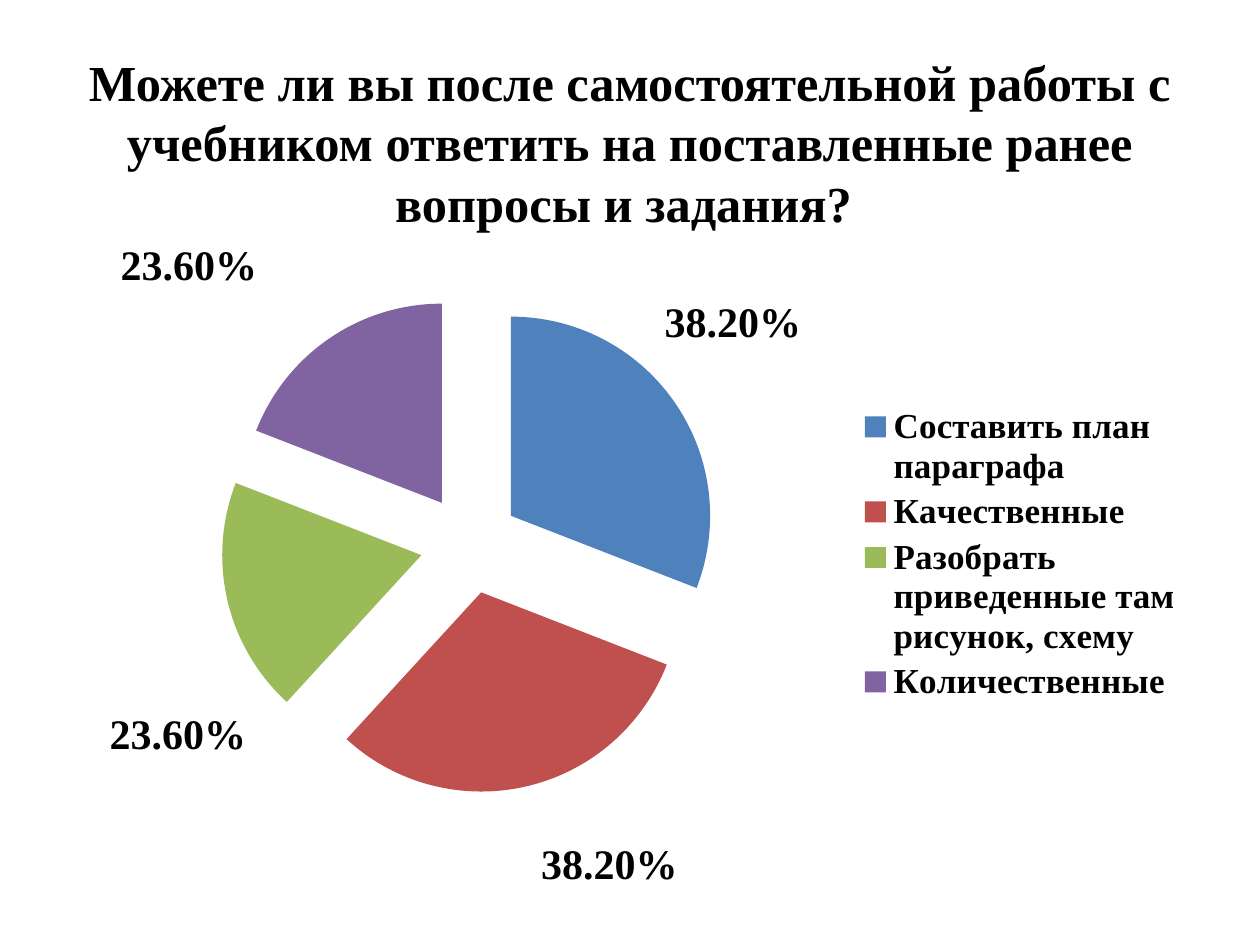
"""Builds a survey slide with a title and an exploded pie chart."""
from dataclasses import dataclass

from lxml.etree import SubElement
from pptx import Presentation
from pptx.chart.data import CategoryChartData
from pptx.dml.color import RGBColor
from pptx.enum.chart import XL_CHART_TYPE as ChartType
from pptx.enum.chart import XL_LABEL_POSITION as LabelPosition
from pptx.enum.chart import XL_LEGEND_POSITION as LegendPosition
from pptx.enum.text import MSO_ANCHOR as Anchor
from pptx.enum.text import PP_ALIGN as Align
from pptx.oxml import parse_xml
from pptx.oxml.ns import nsdecls, qn
from pptx.util import Emu, Pt


@dataclass(frozen=True)
class Theme:
    font: str = "Times New Roman"
    text: str = "000000"
    slices: tuple = ("4F81BD", "C0504D", "9BBB59", "8064A2")
    title_size: float = 28.8
    label_size: int = 24
    legend_size: int = 20


THEME = Theme()
PX = 914400 / 126
CHART_WIDTH, CHART_HEIGHT = 1134, 669


def style_font(font, size):
    font.name = THEME.font
    font.size = Pt(size)
    font.bold = True
    font.color.rgb = RGBColor.from_string(THEME.text)


def manual_layout(x, y, width=None, height=None):
    layout = parse_xml(f"<c:layout {nsdecls('c')}><c:manualLayout/></c:layout>")
    entries = {"x": x / CHART_WIDTH, "y": y / CHART_HEIGHT}
    if width:
        entries = {"xMode": "edge", "yMode": "edge", **entries,
                   "w": width / CHART_WIDTH, "h": height / CHART_HEIGHT}
    for name, value in entries.items():
        SubElement(layout[0], qn(f"c:{name}")).set("val", str(value))
    return layout


presentation = Presentation()
presentation.slide_width = Emu(int(1260 * PX))
presentation.slide_height = Emu(int(945 * PX))
slide = presentation.slides.add_slide(presentation.slide_layouts[6])

title = slide.shapes.add_textbox(*(Emu(int(v * PX)) for v in (63, 38, 1134, 207)))
text_frame = title.text_frame
text_frame.word_wrap = True
text_frame.vertical_anchor = Anchor.MIDDLE
text_frame.text = ("Можете ли вы после самостоятельной работы с учебником "
                   "ответить на поставленные ранее вопросы и задания? ")
paragraph = text_frame.paragraphs[0]
paragraph.alignment = Align.CENTER
style_font(paragraph.runs[0].font, THEME.title_size)

chart_data = CategoryChartData(number_format="0.00%")
chart_data.categories = ["Составить план параграфа", "Качественные",
                         "Разобрать приведенные там рисунок, схему", "Количественные"]
chart_data.add_series("Series 1", (0.382, 0.382, 0.236, 0.236))
chart_box = [Emu(int(v * PX)) for v in (63, 220, CHART_WIDTH, CHART_HEIGHT)]
chart = slide.shapes.add_chart(ChartType.PIE, *chart_box, chart_data).chart
chart.has_title = False
style_font(chart.font, THEME.legend_size)

chart.has_legend = True
legend = chart.legend
legend.position = LegendPosition.RIGHT
legend.include_in_layout = False
style_font(legend.font, THEME.legend_size)
legend_element = legend._element
for old_layout in legend_element.findall(qn("c:layout")):
    legend_element.remove(old_layout)
legend_element.find(qn("c:legendPos")).addnext(manual_layout(792, 181, 330, 307))

plot_area = chart._chartSpace.chart.plotArea
for old_layout in plot_area.findall(qn("c:layout")):
    plot_area.remove(old_layout)
plot_layout = manual_layout(158, 75, 498, 498)
target = parse_xml(f"<c:layoutTarget {nsdecls('c')} val='inner'/>")
plot_layout[0].insert(0, target)
plot_area.insert(0, plot_layout)

plot = chart.plots[0]
plot.vary_by_categories = True
series = plot.series[0]
labels = series.data_labels
labels.show_value = True
labels.show_percentage = False
labels.number_format = "0.00%"
labels.number_format_is_linked = False
style_font(labels.font, THEME.label_size)

label_shifts = [(-17, -52), (13, 49), (26, 109), (-68, -43)]
for index, (color, shift) in enumerate(zip(THEME.slices, label_shifts)):
    point = series.points[index]
    point.format.fill.solid()
    point.format.fill.fore_color.rgb = RGBColor.from_string(color)
    label = point.data_label
    style_font(label.font, THEME.label_size)
    label.position = LabelPosition.OUTSIDE_END
    label_element = labels._element.findall(qn("c:dLbl"))[index]
    label_element.find(qn("c:idx")).addnext(manual_layout(*shift))

for body in labels._element.iter(qn("a:bodyPr")):
    body.set("wrap", "none")
for leader_lines in labels._element.findall(qn("c:showLeaderLines")):
    labels._element.remove(leader_lines)
no_leader_lines = parse_xml(f"<c:showLeaderLines {nsdecls('c')} val='0'/>")
labels._element.find(qn("c:showBubbleSize")).addnext(no_leader_lines)

explosion = parse_xml(f"<c:explosion {nsdecls('c')} val='25'/>")
series._element.find(qn("c:dPt")).addprevious(explosion)

presentation.save("out.pptx")
